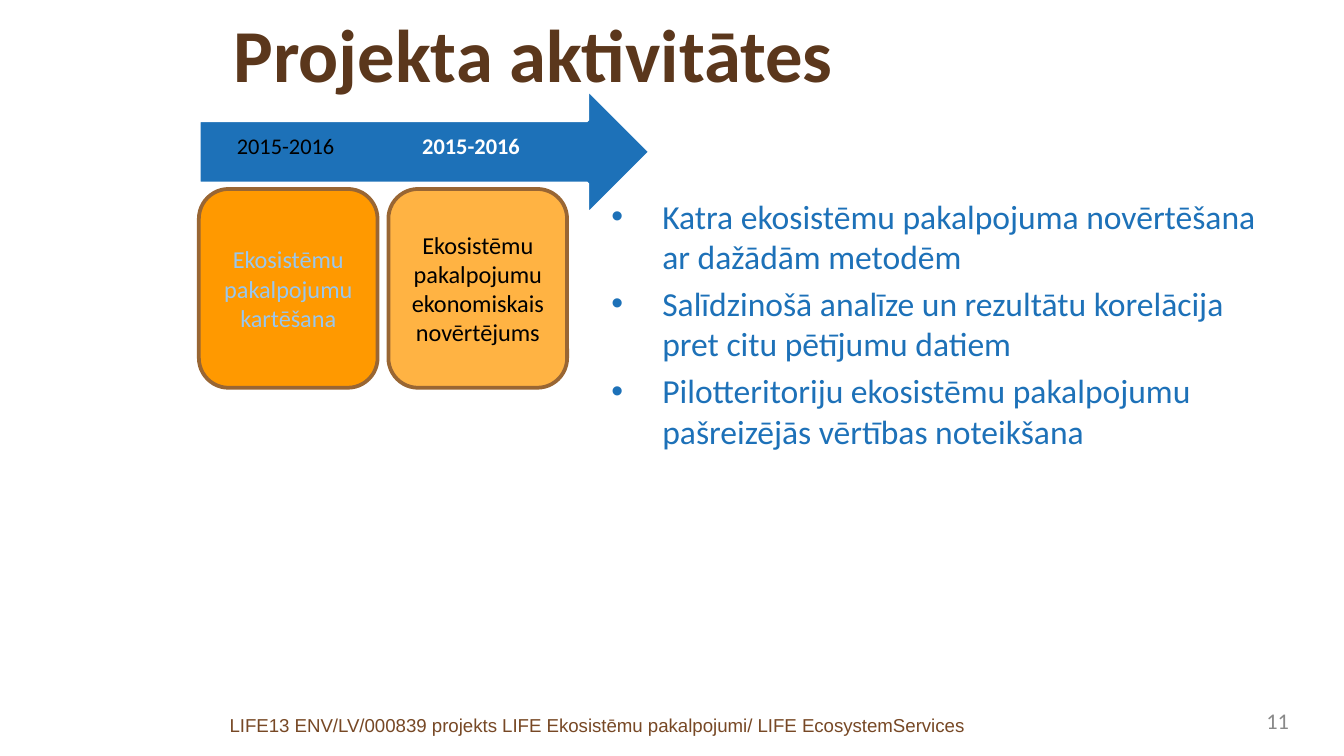
"""Build the project activities slide with its timeline, cards and goals."""
from lxml import etree
from pptx import Presentation, util as u
from pptx.dml.color import RGBColor
from pptx.enum import shapes, text
from pptx.oxml import ns

BLUE, WHITE, BLACK = "1D71B8", "FFFFFF", "000000"
KINDS, ALIGN, ANCHOR = shapes.MSO_SHAPE, text.PP_ALIGN, text.MSO_ANCHOR

deck = Presentation()
deck.slide_width = u.Inches(10)
deck.slide_height = deck.slide_width * 9 // 16
COLUMN, ROW = deck.slide_width / 100, deck.slide_height / 100
page = deck.slides.add_slide(deck.slide_layouts[6])


def place(left, top, width, height, kind=None, fill=None, line=None):
    """Add a text box or preset shape on the 100 by 100 grid."""
    area = [round(n) for n in (left * COLUMN, top * ROW, width * COLUMN, height * ROW)]
    if kind is None:
        return page.shapes.add_textbox(*area)
    box = page.shapes.add_shape(kind, *area)
    box.shadow.inherit = False
    box.fill.solid()
    box.fill.fore_color.rgb = RGBColor.from_string(fill)
    if line:
        box.line.color.rgb = RGBColor.from_string(line)
        box.line.width = u.Pt(2)
    else:
        box.line.fill.background()
    return box


def write(box, *lines, size, color, font="Calibri", bold=False, align=ALIGN.LEFT,
          anchor=ANCHOR.MIDDLE, bullet=None, gap=0, spacing=None, after=None):
    """Fill a box with paragraphs in one format."""
    frame = box.text_frame
    frame.word_wrap = True
    frame.vertical_anchor = anchor
    for index, line in enumerate(lines):
        para = frame.paragraphs[0] if index == 0 else frame.add_paragraph()
        para.alignment = align
        para.space_before = u.Pt(gap if index else 0)
        if spacing:
            para.line_spacing = spacing
        if after:
            para.space_after = u.Pt(after)
        if bullet:
            props = para._p.get_or_add_pPr()
            props.set("marL", str(u.Inches(0.38)))
            props.set("indent", str(-u.Inches(0.38)))
            etree.SubElement(props, ns.qn("a:buFont"), typeface="Arial")
            etree.SubElement(props, ns.qn("a:buChar"), char=bullet)
        span = para.add_run()
        span.text = line
        span.font.name, span.font.size, span.font.bold = font, u.Pt(size), bold
        span.font.color.rgb = RGBColor.from_string(color)


footer = place(16.1, 93.6, 77.2, 4.8)
write(footer, "LIFE13 ENV/LV/000839 projekts LIFE Ekosistēmu pakalpojumi/ LIFE EcosystemServices",
      size=10, color="774825", font="Arial", anchor=ANCHOR.TOP)

title = place(16.4, 0, 80.3, 13.9)
write(title, "Projekta aktivitātes", size=40, color="5B371C", bold=True)

goals = place(44.5, 25, 51.6, 37.5, KINDS.RECTANGLE, WHITE)
write(goals,
      "Katra ekosistēmu pakalpojuma novērtēšana ar dažādām metodēm",
      "Salīdzinošā analīze un rezultātu korelācija pret citu pētījumu datiem",
      "Pilotteritoriju ekosistēmu pakalpojumu pašreizējās vērtības noteikšana",
      size=18, color=BLUE, anchor=ANCHOR.TOP, bullet="•", gap=3.6)

number = place(73.6, 92.7, 23.3, 5.3)
write(number, "11", size=12, color="898989", align=ALIGN.RIGHT)

timeline = place(14.8, 11.75, 33.6, 16.7, KINDS.RIGHT_ARROW, BLUE, WHITE)

for left, color, bold in [(28.6, WHITE, True), (14.8, BLACK, False)]:
    years = place(left, 15.3, 12.9, 8.4)
    frame = years.text_frame
    frame.margin_left = frame.margin_right = 0
    frame.margin_top = frame.margin_bottom = u.Inches(0.13)
    write(years, "2015-2016", size=12, color=color, bold=bold,
          align=ALIGN.CENTER, spacing=0.9, after=4.2)

tasks = [
    ("Ekosistēmu pakalpojumu kartēšana", "FF9900", "98C7EF"),
    ("Ekosistēmu pakalpojumu ekonomiskais novērtējums", "FFB343", BLACK),
]
for step, (task, fill, color) in enumerate(tasks):
    card = place(14.8 + 14.1 * step, 25, 13.3, 26.3, KINDS.ROUNDED_RECTANGLE, fill, "996633")
    write(card, task, size=13, color=color, align=ALIGN.CENTER)

deck.save("out.pptx")
